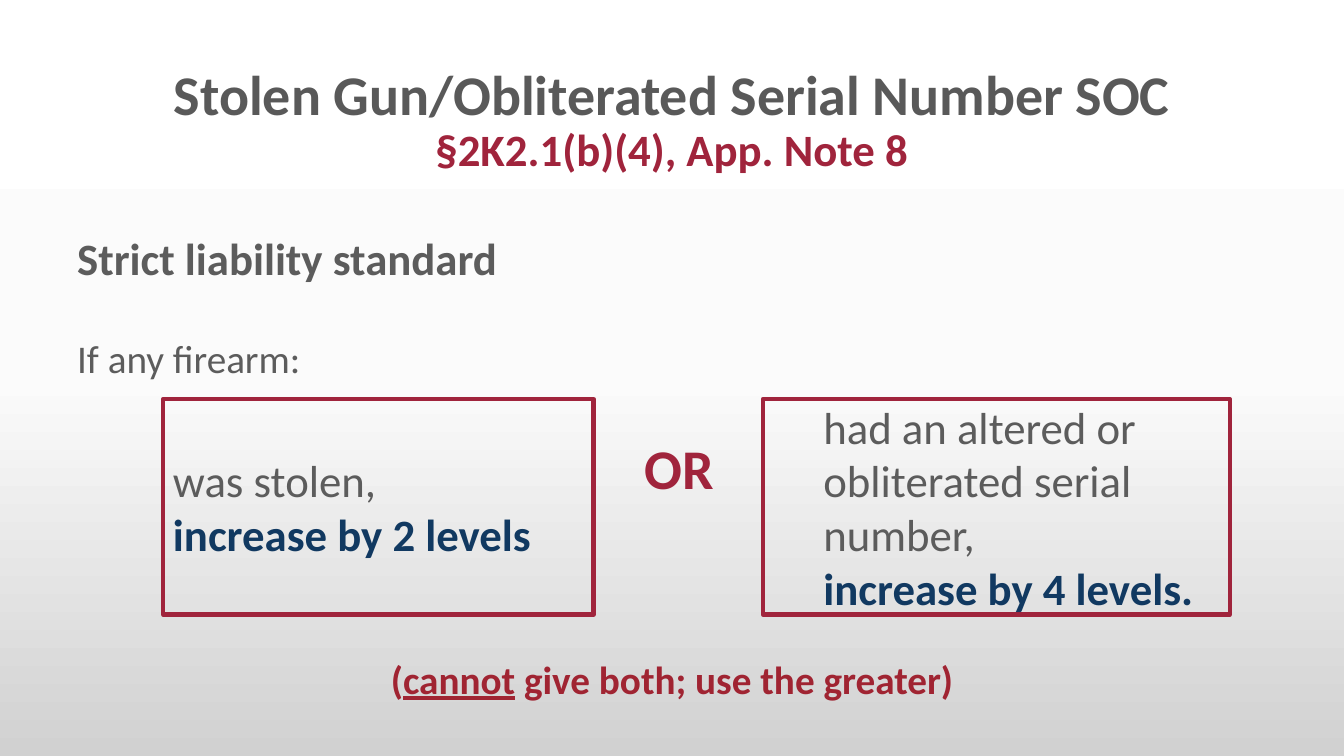
"""Build the slide on the stolen gun and obliterated serial number increases."""
import copy
from dataclasses import dataclass

import pptx
import pptx.dml.color
import pptx.enum.shapes
import pptx.enum.text
import pptx.oxml.ns
import pptx.slide
import pptx.text.text
import pptx.util

Pt = pptx.util.Pt
ALIGN = pptx.enum.text.PP_ALIGN
COLORS = {"title": "595959", "body": "5C5C5C", "crimson": "A0243C",
          "note": "A02432", "navy": "113961"}
GRADIENT = {0: "FFFFFF", 0.5: "FBFBFB", 1: "D1D1D1"}


@dataclass(frozen=True)
class Piece:
    text: str
    size: float
    color: str
    bold: bool = False
    underline: bool = False
    new_line: bool = False


@dataclass(frozen=True)
class Block:
    left: float
    top: float
    width: float
    height: float
    pieces: tuple[Piece, ...]
    align: ALIGN = ALIGN.LEFT
    wrap: bool = True
    indent: float = 0


TITLE = Block(66, 34.5, 828, 104.5, (
    Piece("Stolen Gun/Obliterated Serial Number SOC", 40, "title", True),
    Piece("§2K2.1(b)(4), App. Note 8", 32, "crimson", True, new_line=True)), ALIGN.CENTER)

LABELS = (
    Block(48, 161.5, 325, 46,
          (Piece("Strict liability standard", 32, "body", True),), wrap=False),
    Block(240, 464.5, 480, 41, (
        Piece("(", 28, "note", True),
        Piece("cannot", 28, "note", True, underline=True),
        Piece(" give both; use the greater)", 28, "note", True)), ALIGN.CENTER),
    Block(48, 235.5, 480, 41, (Piece("If any firearm:", 28, "body"),)),
    Block(453.5, 306, 83, 55.5, (Piece("OR", 40, "crimson", True),)),
)

CASES = (
    Block(116.5, 285, 307.5, 154, (
        Piece("was stolen,", 32, "body"),
        Piece("increase by 2 levels", 32, "navy", True, new_line=True))),
    Block(545, 285, 333.5, 154, (
        Piece("had an altered or obliterated serial number,", 32, "body"),
        Piece("increase by 4 levels.", 32, "navy", True, new_line=True)), indent=36),
)


def rgb(value: str) -> pptx.dml.color.RGBColor:
    """Turn a hex string into a colour."""
    return pptx.dml.color.RGBColor.from_string(value)


def write(tf: pptx.text.text.TextFrame, block: Block) -> None:
    """Fill a text frame with the pieces of a block."""
    tf.word_wrap = block.wrap
    p = tf.paragraphs[0]
    p.alignment = block.align
    if block.indent:
        p_pr = p._p.get_or_add_pPr()
        p_pr.set("marL", str(Pt(block.indent)))
        p_pr.set("indent", "0")
    for piece in block.pieces:
        if piece.new_line:
            p.add_line_break()
            p._p[-1].append(copy.deepcopy(r._r.get_or_add_rPr()))
        r = p.add_run()
        r.text = piece.text
        formats = {"name": "Calibri", "size": Pt(piece.size),
                   "bold": piece.bold, "underline": piece.underline}
        for key, value in formats.items():
            setattr(r.font, key, value)
        r.font.color.rgb = rgb(COLORS[piece.color])


def bounds(block: Block) -> tuple[pptx.util.Length, ...]:
    """Give left, top, width and height as lengths."""
    return tuple(Pt(v) for v in (block.left, block.top, block.width, block.height))


def paint_background(s: pptx.slide.Slide) -> None:
    """Shade the slide from white at the top to grey at the bottom."""
    fill = s.background.fill
    fill.gradient()
    fill.gradient_angle = 270
    gs = next(s._element.iter(pptx.oxml.ns.qn("a:gs")))
    gs.addnext(copy.deepcopy(gs))
    for stop, (position, color) in zip(fill.gradient_stops, GRADIENT.items()):
        stop.position = position
        stop.color.rgb = rgb(color)


def add_title(s: pptx.slide.Slide, block: Block) -> None:
    """Place and fill the title placeholder."""
    sp = s.shapes.title
    for key, value in zip(("left", "top", "width", "height"), bounds(block)):
        setattr(sp, key, value)
    sp.text_frame.vertical_anchor = pptx.enum.text.MSO_ANCHOR.MIDDLE
    write(sp.text_frame, block)
    sp.text_frame.paragraphs[0].line_spacing = 0.9


def add_label(s: pptx.slide.Slide, block: Block) -> None:
    """Add a text box that grows with its text."""
    tf = s.shapes.add_textbox(*bounds(block)).text_frame
    tf.auto_size = pptx.enum.text.MSO_AUTO_SIZE.SHAPE_TO_FIT_TEXT
    write(tf, block)


def add_case(s: pptx.slide.Slide, block: Block) -> None:
    """Add an outlined box for one case."""
    sp = s.shapes.add_shape(pptx.enum.shapes.MSO_SHAPE.RECTANGLE, *bounds(block))
    sp.shadow.inherit = False
    sp.fill.background()
    sp.line.color.rgb = rgb(COLORS["crimson"])
    sp.line.width = Pt(3)
    sp.text_frame.vertical_anchor = pptx.enum.text.MSO_ANCHOR.MIDDLE
    write(sp.text_frame, block)


def main() -> None:
    """Build and save the presentation."""
    prs = pptx.Presentation()
    prs.slide_width, prs.slide_height = Pt(960), Pt(540)
    s = prs.slides.add_slide(prs.slide_layouts.get_by_name("Title Only"))
    paint_background(s)
    add_title(s, TITLE)
    for label in LABELS:
        add_label(s, label)
    for case in CASES:
        add_case(s, case)
    prs.save("out.pptx")


if __name__ == "__main__":
    main()
